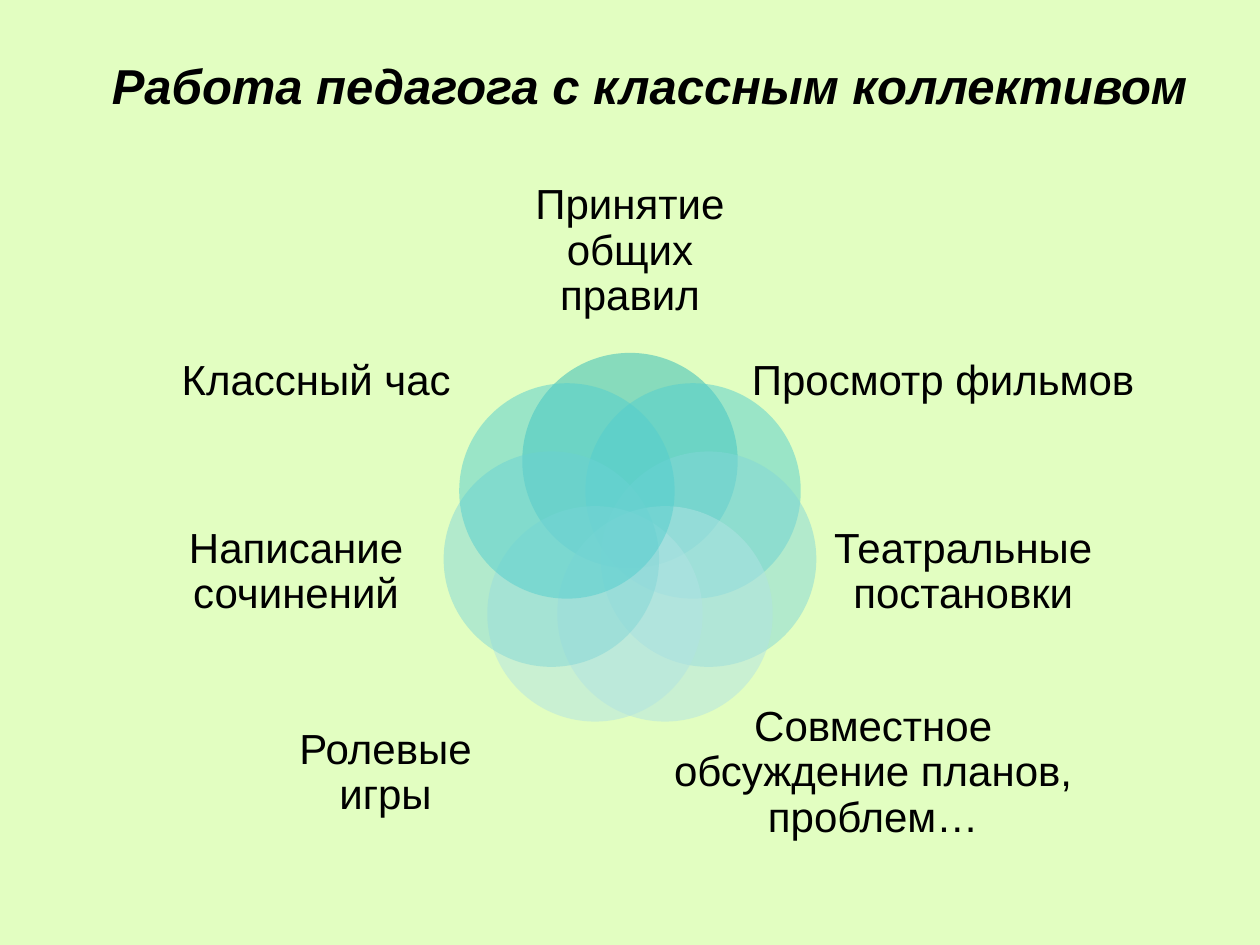
import math
from dataclasses import dataclass

from lxml import etree
from pptx import Presentation, util as u
from pptx.dml.color import RGBColor
from pptx.enum import shapes, text
from pptx.oxml.ns import qn


@dataclass(frozen=True)
class Theme:
    background: str = "E2FEC1"
    ink: str = "000000"
    petals: tuple = ("2EB9B9", "53CECE", "83D7D7", "B1E3E3")
    petal_opacity: int = 50
    font: str = "Arial"
    title_size: int = 28
    label_size: int = 24


THEME = Theme()
WIDTH, HEIGHT = u.Inches(10), u.Inches(7.5)
RING_X, RING_Y, RING_RADIUS, PETAL_SIZE = 50, 57.27, 6.4, 17.1

TITLE = ("Работа педагога с классным коллективом", 7.8, 87.5, (2.27, 13.33))
ROWS = ((19.6, 14), (32.8, 15.33), (52.4, 16.4), (74.27, 15.07))
ACTIVITIES = (
    ("Принятие общих правил", 40.2, 19.6, 0),
    ("Просмотр фильмов", 57.9, 33.9, 1),
    ("Театральные постановки", 62.8, 27.3, 2),
    ("Совместное обсуждение планов, проблем…", 52.3, 34, 3),
    ("Ролевые игры", 20.8, 19.6, 3),
    ("Написание сочинений", 12, 23, 2),
    ("Классный час", 9.1, 32, 1),
)


def across(percent):
    return round(WIDTH * percent / 100)


def down(percent):
    return round(HEIGHT * percent / 100)


def apply(target, values):
    for name, value in values.items():
        setattr(target, name, value)


def add_caption(slide, caption, left, width, row, size, heading=False):
    top, height = row
    box = slide.shapes.add_textbox(across(left), down(top), across(width), down(height))
    frame = box.text_frame
    apply(frame, dict(word_wrap=True, vertical_anchor=text.MSO_ANCHOR.MIDDLE,
                      margin_left=0, margin_right=0, margin_top=0, margin_bottom=0))
    paragraph = frame.paragraphs[0]
    apply(paragraph, dict(alignment=text.PP_ALIGN.CENTER,
                          line_spacing=1.0 if heading else 0.9))
    run = paragraph.add_run()
    run.text = caption
    if heading:
        add_text_shadow(run)
    apply(run.font, dict(name=THEME.font, size=u.Pt(size), bold=heading, italic=heading))
    run.font.color.rgb = RGBColor.from_string(THEME.ink)


def add_text_shadow(run):
    effects = etree.SubElement(run._r.get_or_add_rPr(), qn("a:effectLst"))
    shadow = etree.SubElement(effects, qn("a:outerShdw"),
                              blurRad="38100", dist="38100", dir="2700000")
    etree.SubElement(shadow, qn("a:srgbClr"), val="FFFFFF")


def add_petal(slide, position, color):
    angle = 2 * math.pi * position / len(ACTIVITIES)
    size = across(PETAL_SIZE)
    left = across(RING_X + RING_RADIUS * math.sin(angle)) - size // 2
    top = down(RING_Y) - round(across(RING_RADIUS) * math.cos(angle)) - size // 2
    petal = slide.shapes.add_shape(shapes.MSO_SHAPE.OVAL, left, top, size, size)
    petal.shadow.inherit = False
    petal.line.fill.background()
    petal.fill.solid()
    petal.fill.fore_color.rgb = RGBColor.from_string(color)
    tint = petal._element.spPr.find(qn("a:solidFill"))[0]
    etree.SubElement(tint, qn("a:alpha"), val=str(THEME.petal_opacity * 1000))


def main():
    deck = Presentation()
    apply(deck, dict(slide_width=WIDTH, slide_height=HEIGHT))
    slide = deck.slides.add_slide(deck.slide_layouts[6])
    slide.background.fill.solid()
    slide.background.fill.fore_color.rgb = RGBColor.from_string(THEME.background)

    add_caption(slide, *TITLE, THEME.title_size, heading=True)
    for position, (activity, left, width, level) in enumerate(ACTIVITIES):
        add_petal(slide, position, THEME.petals[level])
        add_caption(slide, activity, left, width, ROWS[level], THEME.label_size)
    deck.save("out.pptx")


if __name__ == "__main__":
    main()
